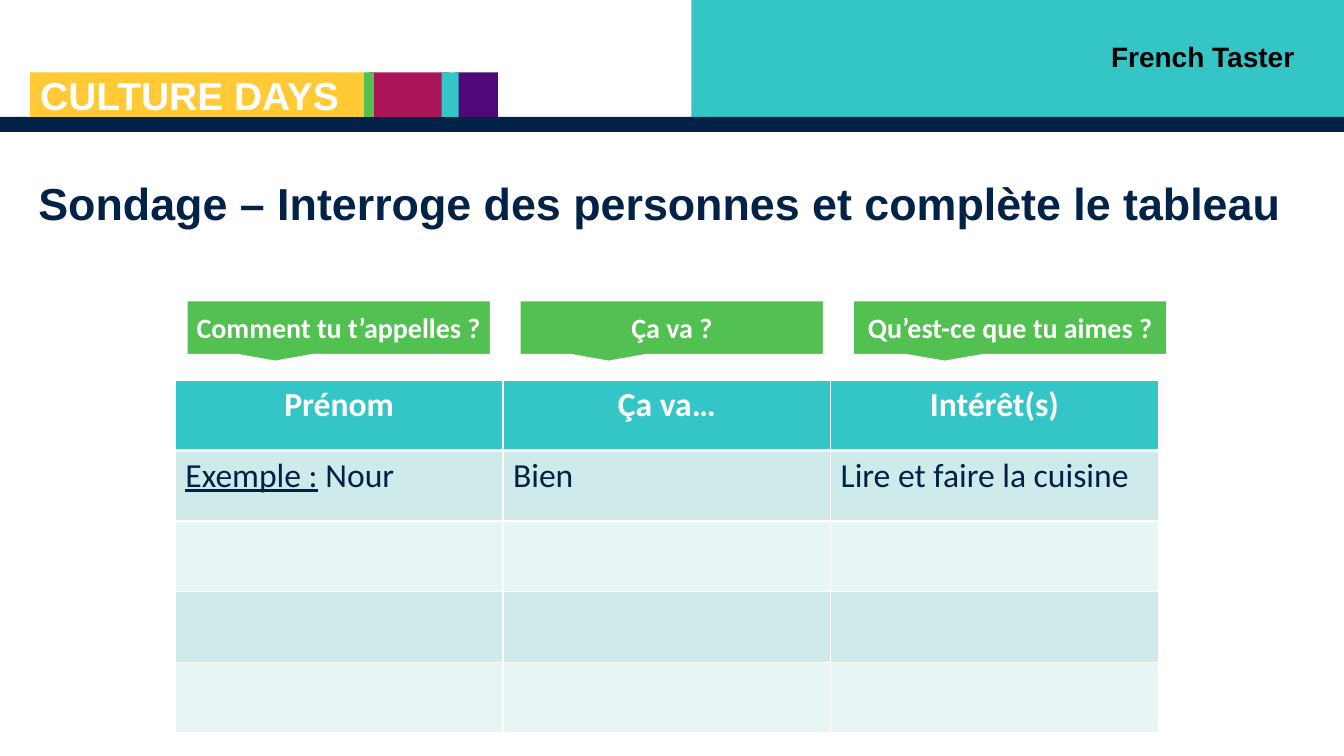
import pptx
import pptx.util
import pptx.dml.color
import pptx.enum.shapes
import pptx.enum.text
import pptx.oxml
import pptx.oxml.ns

Pt = pptx.util.Pt
RGBColor = pptx.dml.color.RGBColor
MSO_SHAPE = pptx.enum.shapes.MSO_SHAPE
PP_ALIGN = pptx.enum.text.PP_ALIGN
MSO_ANCHOR = pptx.enum.text.MSO_ANCHOR
MSO_AUTO_SIZE = pptx.enum.text.MSO_AUTO_SIZE

WHITE = RGBColor(0xFF, 0xFF, 0xFF)
BLACK = RGBColor(0, 0, 0)
NAVY = RGBColor(0x03, 0x22, 0x48)
TABLE_NAVY = RGBColor(0x00, 0x22, 0x48)
TEAL = RGBColor(0x34, 0xC6, 0xC6)
PURPLE = RGBColor(0x50, 0x07, 0x78)
CRIMSON = RGBColor(0xAC, 0x14, 0x5A)
GREEN = RGBColor(0x52, 0xC1, 0x52)
YELLOW = RGBColor(0xFF, 0xCA, 0x36)
BAND_DARK = RGBColor(0xCE, 0xEA, 0xEA)
BAND_LIGHT = RGBColor(0xE8, 0xF5, 0xF5)

# Left, top, width, height, colour, from back to front
BANNER_BLOCKS = [
    (493.9, 0, 466.1, 83.5, TEAL),
    (0, 83.5, 960, 10.8, NAVY),
    (324.7, 51.8, 31, 31.7, PURPLE),
    (263.5, 51.8, 56.9, 31.7, CRIMSON),
    (315.4, 51.8, 12.2, 31.7, TEAL),
    (259.9, 51.8, 7.2, 31.7, GREEN),
    (21.6, 51.8, 238.3, 31.7, YELLOW),
]
QUESTIONS = [
    ("Comment tu t’appelles ?", 217.4),
    ("Ça va ?", 217.4),
    ("Qu’est-ce que tu aimes ?", 224.6),
]
HEADINGS = ["Prénom", "Ça va…", "Intérêt(s)"]
EXAMPLE = [
    [("Exemple :", True), (" Nour", False)],
    [("Bien", False)],
    [("Lire et faire la cuisine", False)],
]
ROW_COUNT = 5
COLUMN_WIDTH = 234
ROW_HEIGHT = 50.4


def add_run(paragraph, text, size, color, font="Arial", bold=True, underline=False):
    run = paragraph.add_run()
    run.text = text
    run.font.name = font
    run.font.size = Pt(size)
    run.font.bold = bold
    run.font.underline = underline
    run.font.color.rgb = color


def add_block(slide, kind, left, top, width, height, color):
    shape = slide.shapes.add_shape(kind, Pt(left), Pt(top), Pt(width), Pt(height))
    shape.shadow.inherit = False
    shape.fill.solid()
    shape.fill.fore_color.rgb = color
    shape.line.fill.background()
    return shape


def add_label(slide, left, top, width, height, text, size, color,
              align=PP_ALIGN.LEFT, spacing=1.0):
    box = slide.shapes.add_textbox(Pt(left), Pt(top), Pt(width), Pt(height))
    box.text_frame.word_wrap = True
    paragraph = box.text_frame.paragraphs[0]
    paragraph.alignment = align
    paragraph.line_spacing = spacing
    add_run(paragraph, text, size, color)


def set_title(slide, text):
    title = slide.shapes.title
    title.left, title.top, title.width, title.height = Pt(20.2), Pt(126), Pt(911.5), Pt(57.6)
    frame = title.text_frame
    frame.auto_size = MSO_AUTO_SIZE.NONE
    frame.vertical_anchor = MSO_ANCHOR.TOP
    paragraph = frame.paragraphs[0]
    paragraph.alignment = PP_ALIGN.LEFT
    paragraph.line_spacing = 0.9
    add_run(paragraph, text, 32, NAVY)


def add_question(slide, left, width, text):
    callout = add_block(slide, MSO_SHAPE.RECTANGULAR_CALLOUT, left, 214.6, width, 38.9, GREEN)
    callout.line.color.rgb = WHITE
    callout.line.width = Pt(1.5)
    frame = callout.text_frame
    frame.word_wrap = True
    frame.margin_left = frame.margin_right = Pt(4)
    frame.vertical_anchor = MSO_ANCHOR.MIDDLE
    paragraph = frame.paragraphs[0]
    paragraph.alignment = PP_ALIGN.CENTER
    add_run(paragraph, text, 20, WHITE, "Calibri")


def format_cell(cell, color, bottom_width, top_width):
    properties = cell._tc.get_or_add_tcPr()
    borders = {"lnL": 1, "lnR": 1, "lnT": top_width, "lnB": bottom_width}
    for side, width in borders.items():
        properties.append(pptx.oxml.parse_xml(
            f'<a:{side} {pptx.oxml.ns.nsdecls("a")} w="{Pt(width)}">'
            f'<a:solidFill><a:srgbClr val="{WHITE}"/></a:solidFill></a:{side}>'))
    cell.fill.solid()
    cell.fill.fore_color.rgb = color


def add_survey_table(slide):
    columns = len(HEADINGS)
    table = slide.shapes.add_table(
        ROW_COUNT, columns, Pt(125.3), Pt(271.4),
        Pt(COLUMN_WIDTH * columns), Pt(ROW_HEIGHT * ROW_COUNT)).table
    for column in table.columns:
        column.width = Pt(COLUMN_WIDTH)
    for index, row in enumerate(table.rows):
        row.height = Pt(ROW_HEIGHT)
        color = TEAL if index == 0 else BAND_DARK if index % 2 else BAND_LIGHT
        for cell in row.cells:
            format_cell(cell, color, 3 if index == 0 else 1, 3 if index == 1 else 1)

    # Headings and the example answer
    for index, heading in enumerate(HEADINGS):
        paragraph = table.cell(0, index).text_frame.paragraphs[0]
        paragraph.alignment = PP_ALIGN.CENTER
        add_run(paragraph, heading, 24, WHITE, "Calibri")
        paragraph = table.cell(1, index).text_frame.paragraphs[0]
        for text, underline in EXAMPLE[index]:
            add_run(paragraph, text, 24, TABLE_NAVY, "Calibri", False, underline)


def main():
    presentation = pptx.Presentation()
    presentation.slide_width = Pt(960)
    presentation.slide_height = Pt(540)
    slide = presentation.slides.add_slide(presentation.slide_layouts[5])

    # Banner
    for block in BANNER_BLOCKS:
        add_block(slide, MSO_SHAPE.RECTANGLE, *block)
    add_label(slide, 21.6, 54, 298.8, 34.6, "CULTURE DAYS", 27.8, WHITE, spacing=0.8)
    add_label(slide, 547.9, 24.5, 383.8, 31.7, "French Taster", 20, BLACK, PP_ALIGN.RIGHT)

    set_title(slide, "Sondage – Interroge des personnes et complète le tableau")

    # Survey
    add_survey_table(slide)
    for index, (question, width) in enumerate(QUESTIONS):
        add_question(slide, 133.2 + 238 * index, width, question)

    presentation.save("out.pptx")


if __name__ == "__main__":
    main()
